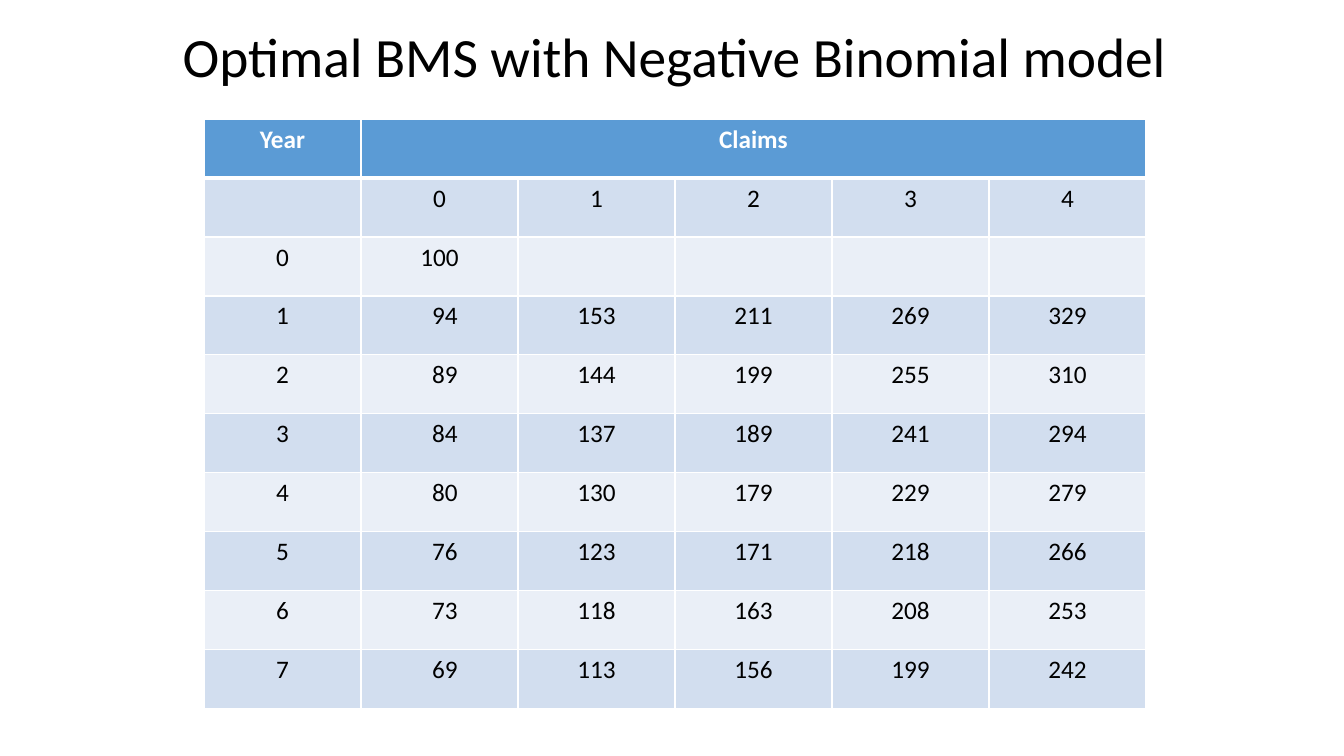
from lxml.etree import SubElement
from pptx import Presentation
from pptx.dml.color import RGBColor
from pptx.enum.text import MSO_ANCHOR, MSO_AUTO_SIZE, PP_ALIGN
from pptx.oxml.ns import qn
from pptx.util import Emu, Pt

TITLE = "Optimal BMS with Negative Binomial model"
HEADINGS = ("Year", "Claims")
CLAIM_COUNTS = (0, 1, 2, 3, 4)
PREMIUMS = (
    (100,),
    (94, 153, 211, 269, 329),
    (89, 144, 199, 255, 310),
    (84, 137, 189, 241, 294),
    (80, 130, 179, 229, 279),
    (76, 123, 171, 218, 266),
    (73, 118, 163, 208, 253),
    (69, 113, 156, 199, 242),
)

BLACK = RGBColor(0x00, 0x00, 0x00)
WHITE = RGBColor(0xFF, 0xFF, 0xFF)
HEADER_BLUE = RGBColor(0x5B, 0x9B, 0xD5)
BANDS = (RGBColor(0xEA, 0xEF, 0xF7), RGBColor(0xD2, 0xDE, 0xEF))

SLIDE_SIZE = (1344, 756)
TITLE_BOX = (95, 37, 1159, 45)
TABLE_LEFT, TABLE_TOP = 204, 119
COLUMN_WIDTH, ROW_HEIGHT = 157, 59
TWO_DIGIT_MARGIN = 21

TITLE_FONT = {"name": "Calibri", "size": Pt(39.6), "bold": False}
HEADER_FONT = {"name": "Calibri", "size": Pt(18), "bold": True}
BODY_FONT = {**HEADER_FONT, "bold": False}


def px(length):
    return Emu(round(length * 914400 / 100.8))


def write(frame, text, font_format, color):
    frame.text = text
    paragraph = frame.paragraphs[0]
    paragraph.alignment = PP_ALIGN.CENTER
    for name, value in font_format.items():
        setattr(paragraph.font, name, value)
    paragraph.font.color.rgb = color
    return paragraph


def add_borders(cell, widths):
    properties = cell._tc.get_or_add_tcPr()
    for side, width in widths.items():
        border = SubElement(properties, qn(f"a:ln{side}"), w=str(Pt(width)))
        fill = SubElement(border, qn("a:solidFill"))
        SubElement(fill, qn("a:srgbClr"), val=str(WHITE))


def add_title(slide):
    title = slide.shapes.title
    title.left, title.top, title.width, title.height = map(px, TITLE_BOX)
    frame = title.text_frame
    frame_format = {
        "auto_size": MSO_AUTO_SIZE.NONE,
        "vertical_anchor": MSO_ANCHOR.MIDDLE,
        "word_wrap": True,
    }
    for name, value in frame_format.items():
        setattr(frame, name, value)
    write(frame, TITLE, TITLE_FONT, BLACK).line_spacing = 0.9


def add_premium_table(slide):
    rows = [HEADINGS, ("", *CLAIM_COUNTS)]
    rows += [(year, *premiums) for year, premiums in enumerate(PREMIUMS)]
    column_count = len(CLAIM_COUNTS) + 1
    table = slide.shapes.add_table(
        len(rows), column_count, px(TABLE_LEFT), px(TABLE_TOP),
        px(COLUMN_WIDTH * column_count), px(ROW_HEIGHT * len(rows)),
    ).table
    for column in table.columns:
        column.width = px(COLUMN_WIDTH)
    for row_index, values in enumerate(rows):
        table.rows[row_index].height = px(ROW_HEIGHT)
        is_header = row_index == 0
        for column_index in range(column_count):
            cell = table.cell(row_index, column_index)
            add_borders(cell, {
                "L": 1, "R": 1,
                "T": 3 if row_index == 1 else 1,
                "B": 3 if is_header else 1,
            })
            cell.fill.solid()
            cell.fill.fore_color.rgb = HEADER_BLUE if is_header else BANDS[row_index % 2]
            text = str(values[column_index]) if column_index < len(values) else ""
            write(
                cell.text_frame, text,
                HEADER_FONT if is_header else BODY_FONT,
                WHITE if is_header else BLACK,
            )
            if column_index == 1 and len(text) == 2:
                cell.margin_left = px(TWO_DIGIT_MARGIN)
    table.cell(0, 1).merge(table.cell(0, column_count - 1))


def main():
    presentation = Presentation()
    presentation.slide_width, presentation.slide_height = map(px, SLIDE_SIZE)
    slide = presentation.slides.add_slide(presentation.slide_layouts[5])
    add_title(slide)
    add_premium_table(slide)
    presentation.save("out.pptx")


if __name__ == "__main__":
    main()
